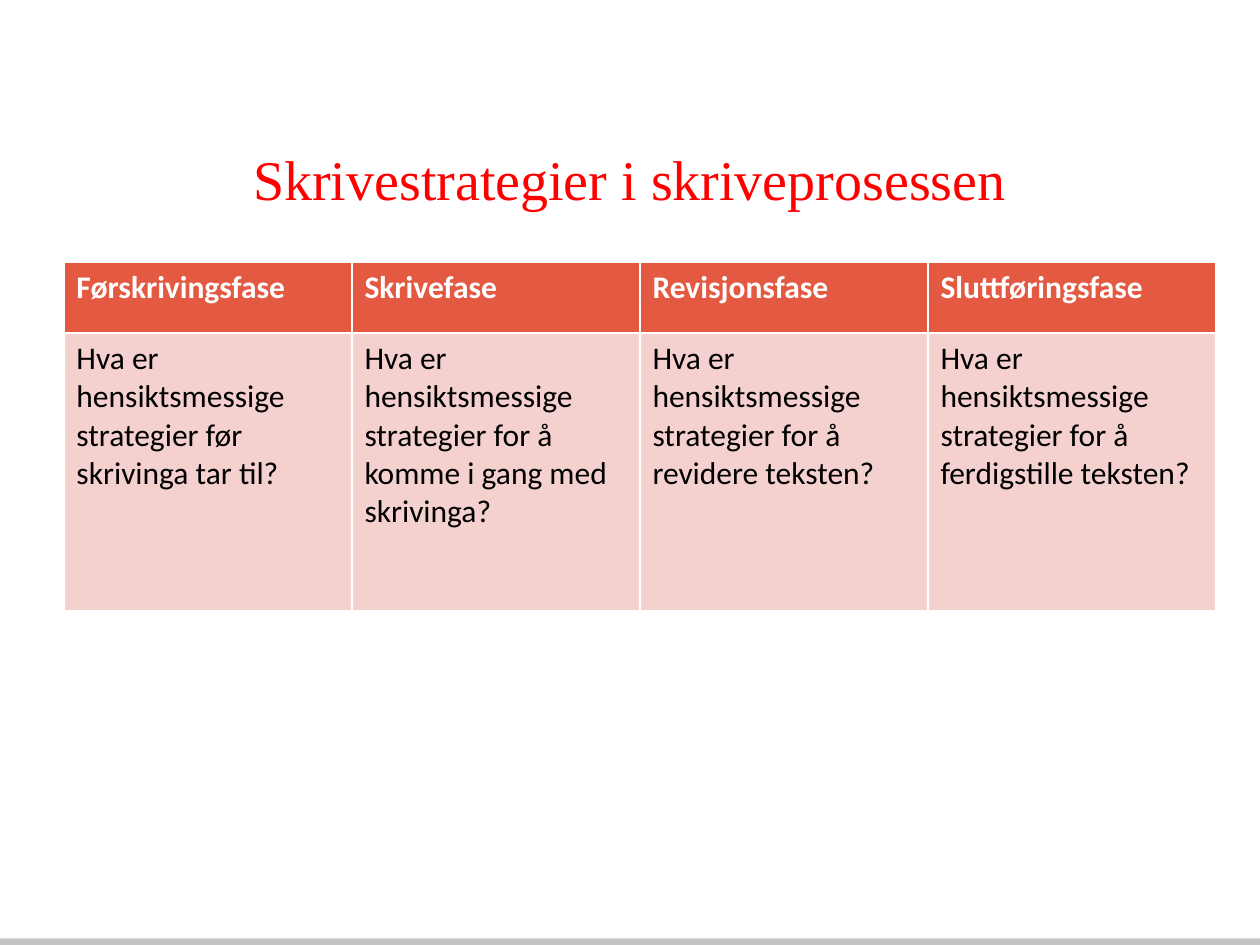
import pptx
import pptx.util
import pptx.oxml
import pptx.oxml.ns
import pptx.dml.color
import pptx.enum.shapes
import pptx.enum.text

Pt = pptx.util.Pt
RGBColor = pptx.dml.color.RGBColor

RED = RGBColor(0xFF, 0x00, 0x00)
CORAL = RGBColor(0xE3, 0x59, 0x41)
PINK = RGBColor(0xF4, 0xD1, 0xCF)
GREY = RGBColor(0xC5, 0xC4, 0xC4)
WHITE = RGBColor(0xFF, 0xFF, 0xFF)
BLACK = RGBColor(0x00, 0x00, 0x00)

SHADOW = (
    '<a:effectLst %s><a:outerShdw blurRad="39370" dist="20320" dir="5400000" '
    'rotWithShape="0"><a:srgbClr val="000000"><a:alpha val="38000"/></a:srgbClr>'
    '</a:outerShdw></a:effectLst>' % pptx.oxml.ns.nsdecls("a")
)

PHASES = [
    ("Førskrivingsfase", "Hva er hensiktsmessige strategier før skrivinga tar til?"),
    ("Skrivefase", "Hva er hensiktsmessige strategier for å komme i gang med skrivinga?"),
    ("Revisjonsfase", "Hva er hensiktsmessige strategier for å revidere teksten?"),
    ("Sluttføringsfase", "Hva er hensiktsmessige strategier for å ferdigstille teksten?"),
]


def style(para, color, form):
    for key, value in form.items():
        setattr(para.font, key, value)
    para.font.color.rgb = color


deck = pptx.Presentation()
deck.slide_width, deck.slide_height = Pt(720), Pt(540)
slide = deck.slides.add_slide(deck.slide_layouts[6])
shapes = slide.shapes

bar = shapes.add_shape(
    pptx.enum.shapes.MSO_SHAPE.RECTANGLE, Pt(0), Pt(536.4), Pt(725.76), Pt(3.6)
)
bar.fill.solid()
bar.fill.fore_color.rgb = GREY
bar.line.fill.background()
bar._element.spPr.append(pptx.oxml.parse_xml(SHADOW))

title = shapes.add_textbox(Pt(36), Pt(54), Pt(648), Pt(96)).text_frame
title.word_wrap = True
title.vertical_anchor = pptx.enum.text.MSO_ANCHOR.MIDDLE
head = title.paragraphs[0]
head.text = "Skrivestrategier i skriveprosessen"
head.alignment = pptx.enum.text.PP_ALIGN.CENTER
style(head, RED, {"name": "Times New Roman", "size": Pt(32)})

frame = shapes.add_table(2, len(PHASES), Pt(36.5), Pt(150), Pt(658.4), Pt(199.2))
table = frame.table
for row, height in zip(table.rows, (40.2, 159)):
    row.height = Pt(height)

LOOKS = [(CORAL, WHITE, True), (PINK, BLACK, False)]
for col, phase in enumerate(PHASES):
    for row, (text, look) in enumerate(zip(phase, LOOKS)):
        fill, color, bold = look
        cell = table.cell(row, col)
        cell.fill.solid()
        cell.fill.fore_color.rgb = fill
        cell.text = text
        form = {"name": "Calibri", "size": Pt(18), "bold": bold}
        style(cell.text_frame.paragraphs[0], color, form)

deck.save("out.pptx")
